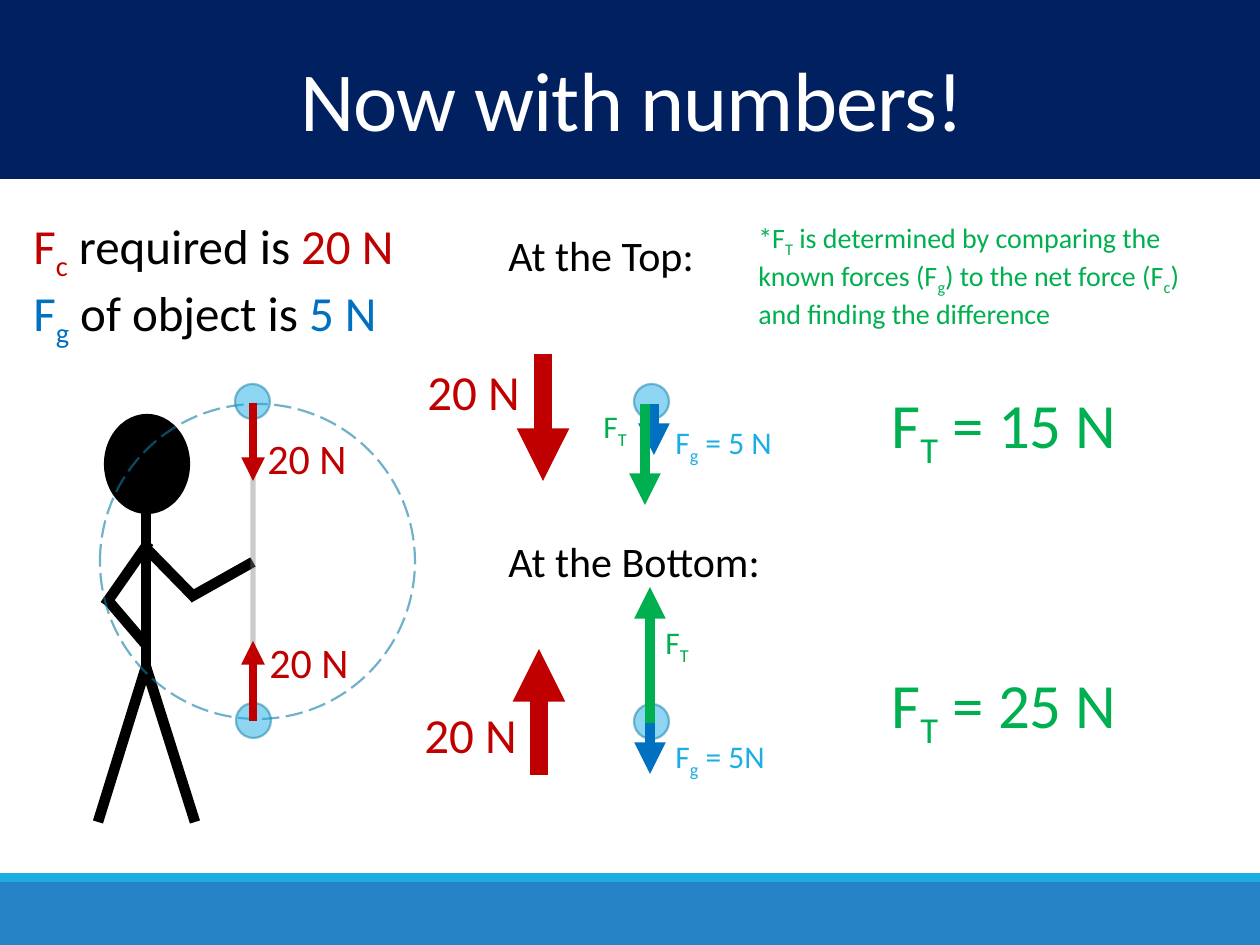
"""Build the slide that works out string tension at the top and bottom of a vertical circle."""
from lxml.etree import SubElement
from pptx import Presentation
from pptx.dml.color import RGBColor as RGB
from pptx.enum.dml import MSO_LINE
from pptx.enum.shapes import MSO_CONNECTOR, MSO_SHAPE
from pptx.enum.text import MSO_ANCHOR, MSO_AUTO_SIZE, PP_ALIGN
from pptx.oxml.ns import qn
from pptx.util import Emu, Pt

COLORS = {
    "navy": "002060", "footer": "2683C6", "sky": "1CADE4", "rim": "117EA7",
    "black": "000000", "white": "FFFFFF", "gray": "7F7F7F",
    "red": "C00000", "blue": "0070C0", "green": "00B050",
}


def px(n):
    return Emu(round(n * 914400 / 126))


def rgb(name):
    return RGB.from_string(COLORS[name])


def set_alpha(element, percent):
    clr = element.find(".//" + qn("a:srgbClr"))
    SubElement(clr, qn("a:alpha")).set("val", str(percent * 1000))


class Painter:
    def __init__(self, slide, font="Calibri"):
        self.s = slide
        self.font = font

    def run(self, p, text, size, color, sub=False):
        r = p.add_run()
        r.text = text
        r.font.size, r.font.name = Pt(size), self.font
        r.font.color.rgb = rgb(color)
        if sub:
            r.font._element.set("baseline", "-25000")
        return r

    def title(self, text, box):
        sp = self.s.shapes.title
        sp.left, sp.top, sp.width, sp.height = map(px, box)
        sp.element.getparent().append(sp.element)
        tf = sp.text_frame
        tf.vertical_anchor = MSO_ANCHOR.MIDDLE
        tf.auto_size = MSO_AUTO_SIZE.NONE
        p = tf.paragraphs[0]
        p.alignment, p.line_spacing = PP_ALIGN.CENTER, 0.85
        self.run(p, text, 48, "white").font._element.set("spc", "-50")

    def text(self, box, size, *lines, wrap=False):
        """Write lines of (text, color) runs; an underscore lowers the next letter."""
        tf = self.s.shapes.add_textbox(*map(px, box)).text_frame
        tf.word_wrap = wrap
        tf.auto_size = MSO_AUTO_SIZE.SHAPE_TO_FIT_TEXT
        for i, line in enumerate(lines):
            p = tf.add_paragraph() if i else tf.paragraphs[0]
            for text, color in line:
                first, *rest = text.split("_")
                self.run(p, first, size, color)
                for part in rest:
                    self.run(p, part[0], size, color, sub=True)
                    if part[1:]:
                        self.run(p, part[1:], size, color)

    def shape(self, kind, box, fill=None, line=None, fill_alpha=100, line_alpha=100):
        sp = self.s.shapes.add_shape(kind, *map(px, box))
        sp.shadow.inherit = False
        if fill:
            sp.fill.solid()
            sp.fill.fore_color.rgb = rgb(fill)
            set_alpha(sp.element.spPr, fill_alpha)
        else:
            sp.fill.background()
        if line:
            sp.line.color.rgb, sp.line.width = rgb(line), Pt(1.25)
            set_alpha(sp.element.spPr.find(qn("a:ln")), line_alpha)
        else:
            sp.line.fill.background()
        return sp

    def band(self, top, height, fill):
        self.shape(MSO_SHAPE.RECTANGLE, (0, top, 1260, height), fill)

    def ball(self, left, top):
        self.shape(MSO_SHAPE.OVAL, (left, top, 35, 35), "sky", "rim", 50, 50)

    def line(self, start, end, color="black", width=6, alpha=100, arrow=False):
        c = self.s.shapes.add_connector(MSO_CONNECTOR.STRAIGHT, *map(px, start + end))
        c.line.color.rgb, c.line.width = rgb(color), Pt(width)
        spPr = c.element.spPr
        ln = spPr.find(qn("a:ln"))
        set_alpha(ln, alpha)
        if arrow:
            SubElement(ln, qn("a:tailEnd")).set("type", "triangle")
        SubElement(spPr, qn("a:effectLst"))

    def force(self, x, start, end, color, width, label, box, size, label_color=None):
        self.line((x, start), (x, end), color, width, arrow=True)
        self.text(box, size, [(label, label_color or color)])


def main():
    prs = Presentation()
    prs.slide_width, prs.slide_height = px(1260), px(945)
    d = Painter(prs.slides.add_slide(prs.slide_layouts[5]))

    d.band(882, 63, "footer")
    d.band(873, 9, "sky")
    d.band(0, 179, "navy")
    d.title("Now with numbers!", (4, 53, 1256, 106))

    d.shape(MSO_SHAPE.OVAL, (105, 415, 84, 98), "black", "black")
    limbs = [
        ((146, 500), (146, 673)),
        ((146, 667), (98, 822)), ((146, 667), (195, 822)),
        ((105, 605), (149, 542)), ((195, 598), (147, 549)),
        ((106, 598), (147, 646)), ((253, 562), (189, 598)),
    ]
    for start, end in limbs:
        d.line(start, end)

    orbit = d.shape(MSO_SHAPE.OVAL, (100, 404, 315, 315), line="rim", line_alpha=60)
    orbit.line.dash_style = MSO_LINE.LONG_DASH
    for left, top in [(235, 384), (236, 703), (634, 384), (634, 704)]:
        d.ball(left, top)
    for end in (406, 720):
        d.line((253, 562), (253, end), "gray", 3, alpha=40)

    for top, heading in [(223, "At the Top:"), (529, "At the Bottom:")]:
        d.text((496, top, 709, 63), 24, [(heading, "black")], wrap=True)

    d.text((21, 209, 393, 131), 28,
           [("F_c", "red"), (" required is ", "black"), ("20 N", "red")],
           [("F_g", "blue"), (" of object is ", "black"), ("5 N", "blue")], wrap=True)

    forces = [
        (253, 403, 481, "red", 4.5, "20 N", (255, 426, 105, 63), 24),
        (253, 721, 641, "red", 4.5, "20 N", (257, 630, 105, 63), 24),
        (654, 404, 455, "blue", 6, "F_g = 5 N", (663, 417, 125, 50), 18, "sky"),
        (645, 404, 505, "green", 6, "F_T", (591, 401, 50, 50), 18),
        (543, 354, 481, "red", 10, "20 N", (415, 355, 120, 72), 28),
        (650, 723, 774, "blue", 6, "F_g = 5N", (663, 731, 117, 50), 18, "sky"),
        (650, 723, 587, "green", 6, "F_T", (653, 617, 50, 50), 18),
        (539, 775, 649, "red", 10, "20 N", (412, 698, 120, 72), 28),
    ]
    for force in forces:
        d.force(*force)

    for top, result in [(379, "F_T = 15 N"), (659, "F_T = 25 N")]:
        d.text((879, top, 291, 89), 36, [(result, "green")])
    note = ("*F_T is determined by comparing the known forces (F_g) "
            "to the net force (F_c) and finding the difference")
    d.text((746, 214, 493, 115), 16, [(note, "green")], wrap=True)

    prs.save("out.pptx")


if __name__ == "__main__":
    main()
